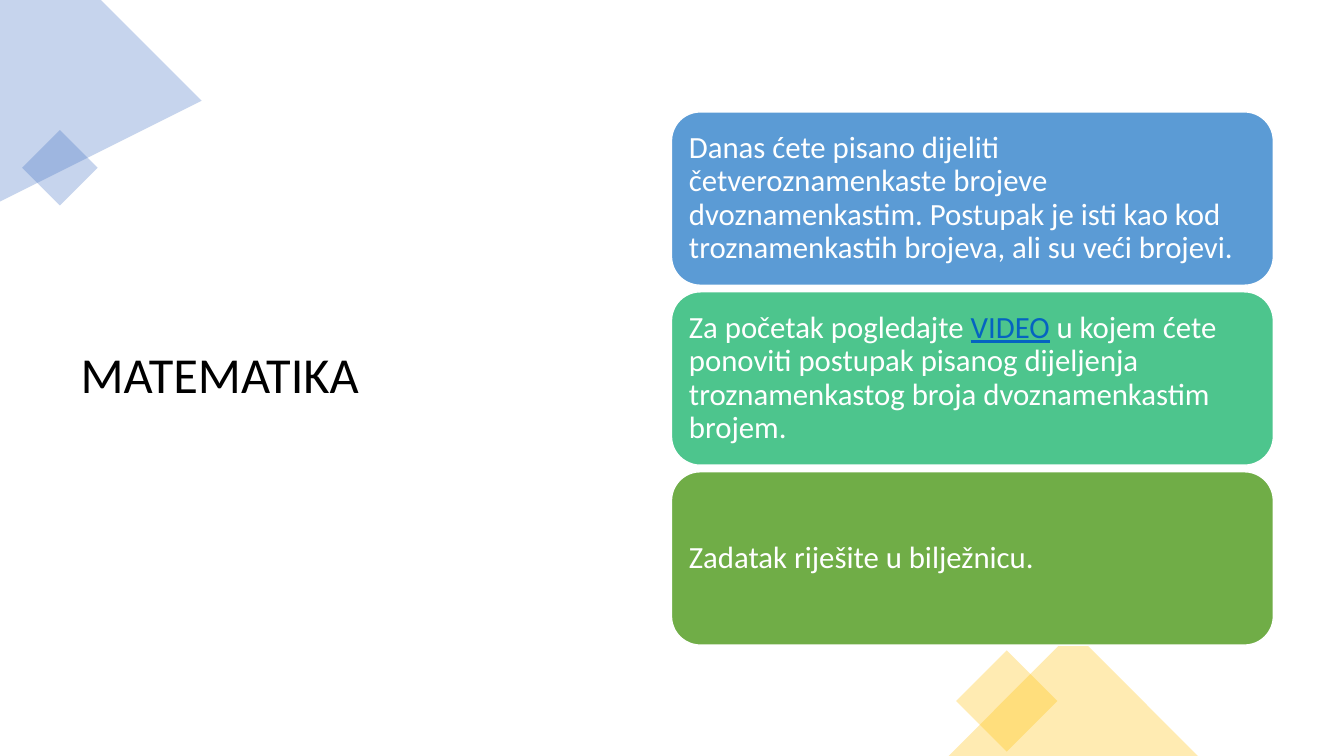
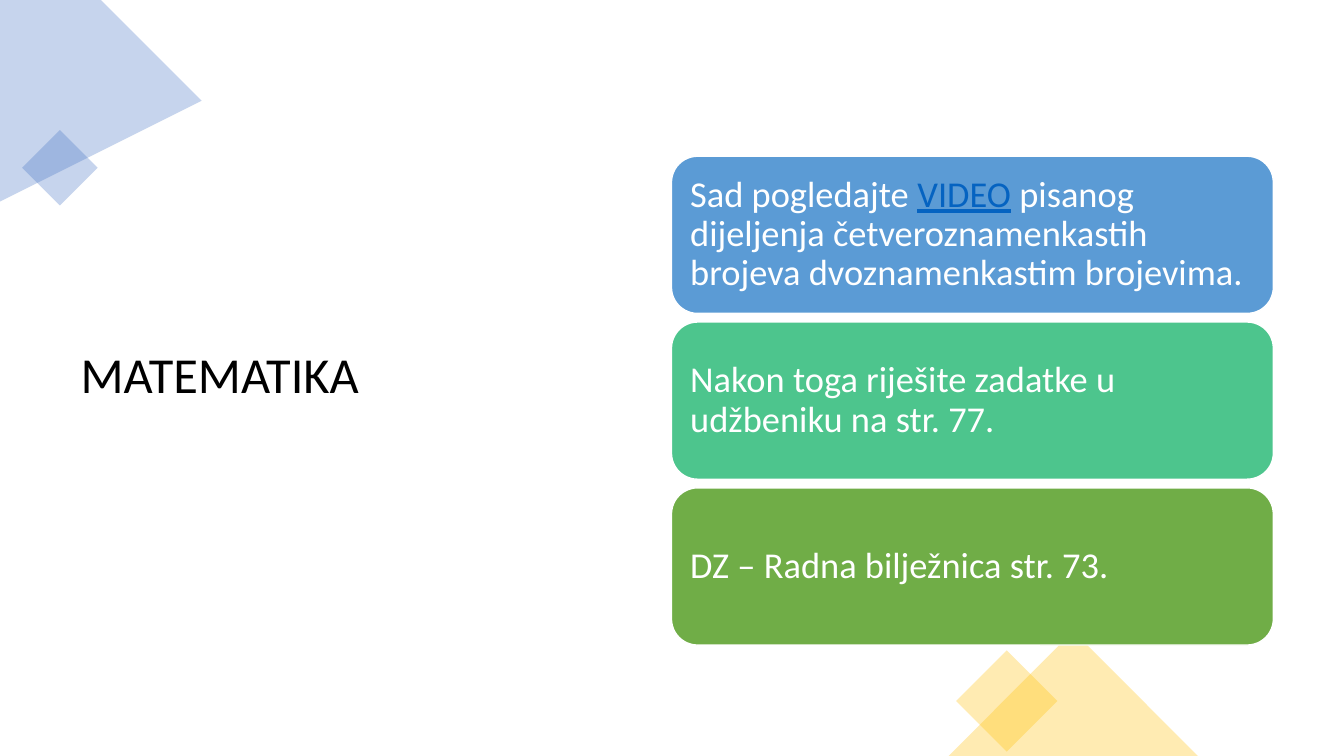
"""Builds two mathematics lesson slides with three instruction cards each."""
import pptx
import pptx.dml.color
import pptx.enum.shapes
import pptx.enum.text
import pptx.oxml
import pptx.oxml.ns
import pptx.util

Inches = pptx.util.Inches
Shape = pptx.enum.shapes.MSO_SHAPE
Middle = pptx.enum.text.MSO_ANCHOR.MIDDLE
Left = pptx.enum.text.PP_ALIGN.LEFT

theme = {
    "font": "Calibri",
    "title_size": 36,
    "title": "000000",
    "blue": "4472C4",
    "gold": "FFC000",
    "white": "FFFFFF",
    "link": "0563C1",
    "cards": ["5B9BD5", "4DC58D", "70AD47"],
    "opacity": 30,
}

lessons = [
    {
        "top": 1.11, "height": 1.72, "inset": 0.09, "size": 22,
        "cards": [
            ["Danas ćete pisano dijeliti četveroznamenkaste brojeve dvoznamenkastim. "
             "Postupak je isti kao kod troznamenkastih brojeva, ali su veći brojevi."],
            ["Za početak pogledajte ", "VIDEO",
             " u kojem ćete ponoviti postupak pisanog dijeljenja "
             "troznamenkastog broja dvoznamenkastim brojem."],
            ["Zadatak riješite u bilježnicu."],
        ],
    },
    {
        "top": 1.55, "height": 1.56, "inset": 0.11, "size": 26,
        "cards": [
            ["Sad pogledajte ", "VIDEO",
             " pisanog dijeljenja četveroznamenkastih brojeva dvoznamenkastim brojevima."],
            ["Nakon toga riješite zadatke u udžbeniku na str. 77."],
            ["DZ – Radna bilježnica str. 73."],
        ],
    },
]

card_left, card_width, cards_bottom = 6.66, 5.97, 6.4
corner_outline = [(0.99, 0), (1.59, 0.59), (0.14, 2.04), (0, 1.91)]
ornaments = [
    (Shape.RECTANGLE, 0.33, 1.4, 0.53, 0.53, 45, "blue"),
    (Shape.RECTANGLE, 9.63, 6.6, 0.71, 0.71, 45, "gold"),
    (Shape.ISOSCELES_TRIANGLE, 9.41, 6.26, 2.47, 1.24, 0, "gold"),
]


def paint(shape, color, opacity=100):
    """Fill a shape, with no outline and no shadow."""
    shape.shadow.inherit = False
    shape.line.fill.background()
    shape.fill.solid()
    shape.fill.fore_color.rgb = pptx.dml.color.RGBColor.from_string(color)
    if opacity < 100:
        tint = shape.fill._xPr.find(".//" + pptx.oxml.ns.qn("a:srgbClr"))
        alpha = pptx.oxml.parse_xml(
            f'<a:alpha {pptx.oxml.ns.nsdecls("a")} val="{opacity * 1000}"/>')
        tint.append(alpha)


def write(shape, parts, size, color, inset):
    """Write one left-aligned paragraph, centred vertically."""
    frame = shape.text_frame
    frame.word_wrap = True
    frame.vertical_anchor = Middle
    frame.margin_left = frame.margin_right = Inches(inset)
    frame.margin_top = frame.margin_bottom = Inches(inset)
    para = frame.paragraphs[0]
    para.alignment = Left
    para.line_spacing = 0.9
    for part in parts:
        linked = part == "VIDEO"
        span = para.add_run()
        span.text = part
        span.font.name = theme["font"]
        span.font.size = pptx.util.Pt(size)
        span.font.underline = linked
        span.font.color.rgb = pptx.dml.color.RGBColor.from_string(
            theme["link"] if linked else color)


deck = pptx.Presentation()
deck.slide_width = Inches(13.33)
deck.slide_height = Inches(7.5)

for lesson in lessons:
    page = deck.slides.add_slide(deck.slide_layouts[6])

    title = page.shapes.add_textbox(Inches(0.7), Inches(0.7), Inches(5.25), Inches(6.09))
    write(title, ["MATEMATIKA"], theme["title_size"], theme["title"], 0.1)

    outline = page.shapes.build_freeform(0, 0, scale=Inches(1))
    outline.add_line_segments(corner_outline, close=True)
    paint(outline.convert_to_shape(), theme["blue"], theme["opacity"])

    for kind, left, top, width, height, angle, color in ornaments:
        ornament = page.shapes.add_shape(
            kind, Inches(left), Inches(top), Inches(width), Inches(height))
        ornament.rotation = angle
        paint(ornament, theme[color], theme["opacity"])

    step = (cards_bottom - lesson["height"] - lesson["top"]) / (len(lesson["cards"]) - 1)
    for index, (parts, color) in enumerate(zip(lesson["cards"], theme["cards"])):
        card = page.shapes.add_shape(
            Shape.ROUNDED_RECTANGLE, Inches(card_left), Inches(lesson["top"] + index * step),
            Inches(card_width), Inches(lesson["height"]))
        paint(card, color)
        card.line.color.rgb = pptx.dml.color.RGBColor.from_string(theme["white"])
        card.line.width = pptx.util.Pt(1)
        write(card, parts, lesson["size"], theme["white"], lesson["inset"])

deck.save("out.pptx")
